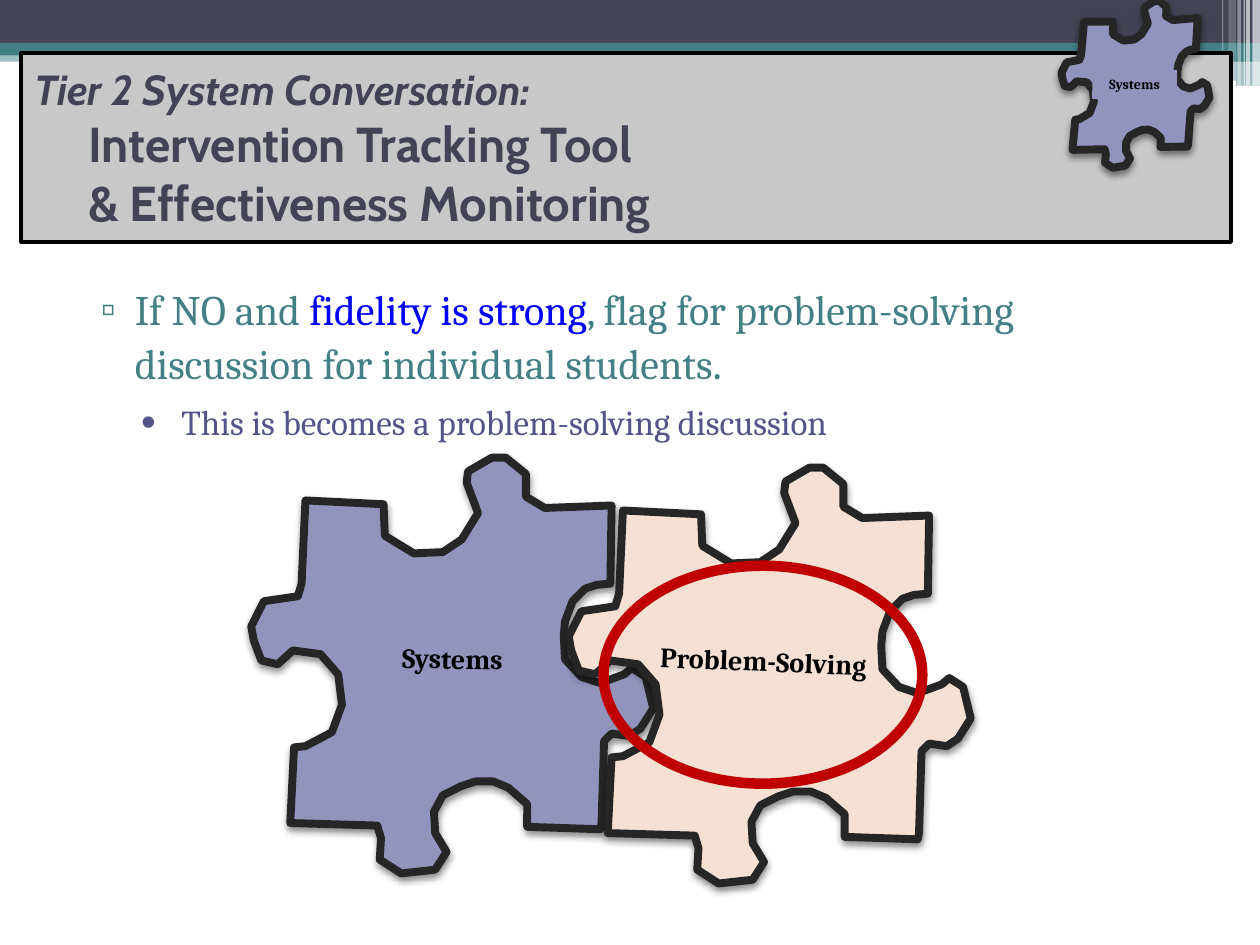
import math
from dataclasses import dataclass
from lxml import etree
from pptx import Presentation
from pptx import util as u
from pptx.dml import color as col
from pptx.enum import shapes as sh, text as tx
from pptx.oxml import ns

inch = u.Inches


@dataclass(frozen=True)
class Theme:
    head: str = "Cabin"
    body: str = "Cambria"
    navy: str = "424456"
    teal: str = "438086"
    plum: str = "53548A"
    blue: str = "0000FF"
    lilac: str = "9394BE"
    peach: str = "F5E0D3"
    gray: str = "C8C8C8"
    edge: str = "262626"
    red: str = "C00000"
    black: str = "000000"
    white: str = "FFFFFF"
    large: int = 28
    lead: int = 24
    sub: int = 20
    tag: int = 16
    tiny: int = 8


T = Theme()
TURN = 28.1
HUB = (3.595, 5.27)
SPAN = (3.29, 3.42)
EDGE = [
    (4.85, 4.01), (4.84, 4.63), (4.73, 4.64), (4.64, 4.67), (4.54, 4.77),
    (4.48, 4.93), (4.47, 5.04), (4.48, 5.23), (4.61, 5.37), (4.76, 5.42),
    (4.95, 5.35), (5.01, 5.3), (5.12, 5.37), (5.18, 5.62), (5.08, 5.78),
    (4.99, 5.84), (4.85, 5.82), (4.79, 5.88), (4.77, 6.53), (4.76, 6.58),
    (4.18, 6.56), (4.18, 6.38), (4.03, 6.25), (3.91, 6.2), (3.77, 6.2),
    (3.65, 6.24), (3.51, 6.31), (3.44, 6.44), (3.45, 6.61), (3.54, 6.76),
    (3.45, 6.9), (3.18, 6.93), (3.01, 6.82), (3.02, 6.65), (2.99, 6.55),
    (2.3, 6.53), (2.33, 5.93), (2.42, 5.92), (2.63, 5.81), (2.71, 5.59),
    (2.68, 5.35), (2.54, 5.19), (2.32, 5.16), (2.2, 5.27), (2.07, 5.24),
    (2.01, 5.08), (1.99, 4.97), (2.09, 4.77), (2.36, 4.73), (2.39, 4.63),
    (2.42, 3.97), (3.04, 4), (3.05, 4.25), (3.28, 4.39), (3.51, 4.38),
    (3.66, 4.28), (3.79, 4.07), (3.7, 3.83), (3.71, 3.74), (3.9, 3.63),
    (4.01, 3.63), (4.17, 3.76), (4.17, 3.94), (4.32, 4.03),
]


def rgb(hue):
    return col.RGBColor.from_string(hue)


def node(top, tag, **keys):
    return etree.SubElement(top, ns.qn(tag), {k: str(v) for k, v in keys.items()})


def place(shape, box):
    shape.left, shape.top, shape.width, shape.height = map(inch, box)


def paint(shape, fill=None, line=None, width=0, alpha=100):
    shape.shadow.inherit = False
    if fill:
        shape.fill.solid()
        shape.fill.fore_color.rgb = rgb(fill)
        if alpha < 100:
            hue = shape.element.spPr.find(".//" + ns.qn("a:srgbClr"))
            node(hue, "a:alpha", val=alpha * 1000)
    else:
        shape.fill.background()
    if line:
        shape.line.color.rgb = rgb(line)
        shape.line.width = u.Pt(width)
    else:
        shape.line.fill.background()


def write(para, words, size, hue, font=T.body, bold=False, slant=False):
    run = para.add_run()
    run.text = words
    run.font.size = u.Pt(size)
    run.font.name = font
    run.font.bold = bold
    run.font.italic = slant
    run.font.color.rgb = rgb(hue)


def indent(para, left, first=0):
    props = para._p.get_or_add_pPr()
    props.set("marL", str(inch(left)))
    props.set("indent", str(inch(first)))
    return props


def bullet(para, mark, hue, left, first, gap, scale=100):
    para.space_before = u.Pt(gap)
    props = indent(para, left, first)
    node(node(props, "a:buClr"), "a:srgbClr", val=hue)
    node(props, "a:buSzPct", val=scale * 1000)
    node(props, "a:buChar", char=mark)


def banner(slide, box):
    x, y, w, h = box
    half = x + 0.592 * w
    bars = [
        (x, 0.4, w, 0.09, T.teal, 50), (x, y, w, 0.34, T.navy, 100),
        (x, 0.34, w, 0.1, T.teal, 100), (half, 0.39, 4.08, 0.1, T.teal, 100),
        (half, 0.48, 4.08, 0.2, T.teal, 50), (8.06, 0.64, 1.75, 0.04, T.white, 100),
    ]
    rays = [(9.94, 0.06, h, 65), (9.89, 0.03, h, 65), (9.87, 0.01, h, 60),
            (9.82, 0.03, h, 40), (9.75, 0.06, 0.64, 20), (9.7, 0.01, 0.64, 30)]
    bars += [(left, y, wide, tall, T.white, alpha) for left, wide, tall, alpha in rays]
    for *spot, hue, alpha in bars:
        round_bar = spot[3] == 0.04
        kind = sh.MSO_SHAPE.ROUNDED_RECTANGLE if round_bar else sh.MSO_SHAPE.RECTANGLE
        bar = slide.shapes.add_shape(kind, *map(inch, spot))
        paint(bar, hue, alpha=alpha)


def points(slide, box):
    body = slide.placeholders[1]
    slide.shapes.element.append(body.element)
    place(body, box)
    frame = body.text_frame
    frame.auto_size = tx.MSO_AUTO_SIZE.NONE
    lead = frame.paragraphs[0]
    lead.level = 1
    bullet(lead, "▫", T.teal, 0.72, -0.27, 3)
    write(lead, "If NO and ", T.lead, T.teal)
    write(lead, "fidelity is strong", T.lead, T.blue)
    write(lead, ", flag for problem-solving discussion for individual students", T.lead, T.teal)
    write(lead, ".", 26, T.teal)
    sub = frame.add_paragraph()
    sub.level = 2
    bullet(sub, "•", T.plum, 1.09, -0.32, 7, 120)
    write(sub, "This is becomes a problem-solving discussion", T.sub, T.plum)


def heading(slide, box):
    title = slide.shapes.title
    slide.shapes.element.append(title.element)
    place(title, box)
    paint(title, T.gray, T.black, 2.25)
    frame = title.text_frame
    frame.auto_size = tx.MSO_AUTO_SIZE.NONE
    frame.vertical_anchor = tx.MSO_ANCHOR.MIDDLE
    rows = [("Tier 2 System Conversation:", T.lead, True, 0),
            ("Intervention Tracking Tool", T.large, False, 0.43),
            ("& Effectiveness Monitoring", T.large, False, 0.43)]
    for i, (words, size, slant, left) in enumerate(rows):
        para = frame.add_paragraph() if i else frame.paragraphs[0]
        para.alignment = tx.PP_ALIGN.LEFT
        indent(para, left)
        write(para, words, size, T.navy, T.head, True, slant)


def piece(group, box, hue):
    x, y, w, h = box
    cos, sin = math.cos(math.radians(TURN)), math.sin(math.radians(TURN))
    dots = []
    for px, py in EDGE:
        dx, dy = px - HUB[0], py - HUB[1]
        across = (dx * cos + dy * sin) * w / SPAN[0]
        down = (dy * cos - dx * sin) * h / SPAN[1]
        dots.append((inch(x + w / 2 + across), inch(y + h / 2 + down)))
    pen = group.shapes.build_freeform(*dots[0])
    pen.add_line_segments(dots[1:], close=True)
    shape = pen.convert_to_shape()
    shape.rotation = TURN
    paint(shape, hue, T.edge, 4.5)
    glow = shape.element.spPr.find(ns.qn("a:effectLst"))
    shade = node(glow, "a:outerShdw", blurRad=u.Pt(4), dist=u.Pt(2),
                 dir=90 * 60000, rotWithShape=0)
    node(node(shade, "a:srgbClr", val=T.black), "a:alpha", val=45000)


def label(group, box, words, size, turn, fill=None):
    note = group.shapes.add_textbox(*map(inch, box))
    note.rotation = turn
    if fill:
        paint(note, fill)
    frame = note.text_frame
    frame.word_wrap = True
    frame.auto_size = tx.MSO_AUTO_SIZE.SHAPE_TO_FIT_TEXT
    para = frame.paragraphs[0]
    para.alignment = tx.PP_ALIGN.CENTER
    write(para, words, size, T.black, bold=True)


def badge(slide, box):
    x, y = box[:2]
    group = slide.shapes.add_group_shape()
    piece(group, box, T.lilac)
    label(group, (x + 0.25, y + 0.58, 0.67, 0.24), "Systems", T.tiny, 0.8, T.lilac)


def puzzle(slide, box):
    x, y = box[:2]
    group = slide.shapes.add_group_shape()
    piece(group, (x, y, *SPAN), T.lilac)
    label(group, (x + 0.71, y + 1.48, 1.86, 0.48), "Systems", T.tag, 0.8)
    piece(group, (x + 2.52, y + 0.08, *SPAN), T.peach)
    label(group, (x + 3.18, y + 1.5, 1.84, 0.83), "Problem-Solving", T.tag, 2.3)
    ring = slide.shapes.add_shape(
        sh.MSO_SHAPE.OVAL, *map(inch, (x + 2.84, y + 0.93, 2.53, 1.73)))
    paint(ring, line=T.red, width=6)


def main():
    deck = Presentation()
    deck.slide_width, deck.slide_height = inch(10), inch(7.5)
    slide = deck.slides.add_slide(deck.slide_layouts[1])
    banner(slide, (0, 0, 10, 0.68))
    points(slide, (0.25, 2.2, 8.25, 5.33))
    heading(slide, (0.17, 0.42, 9.6, 1.5))
    badge(slide, (8.42, -0.03, 1.19, 1.39))
    puzzle(slide, (1.95, 3.56, 5.81, 3.5))
    deck.save("out.pptx")


if __name__ == "__main__":
    main()
